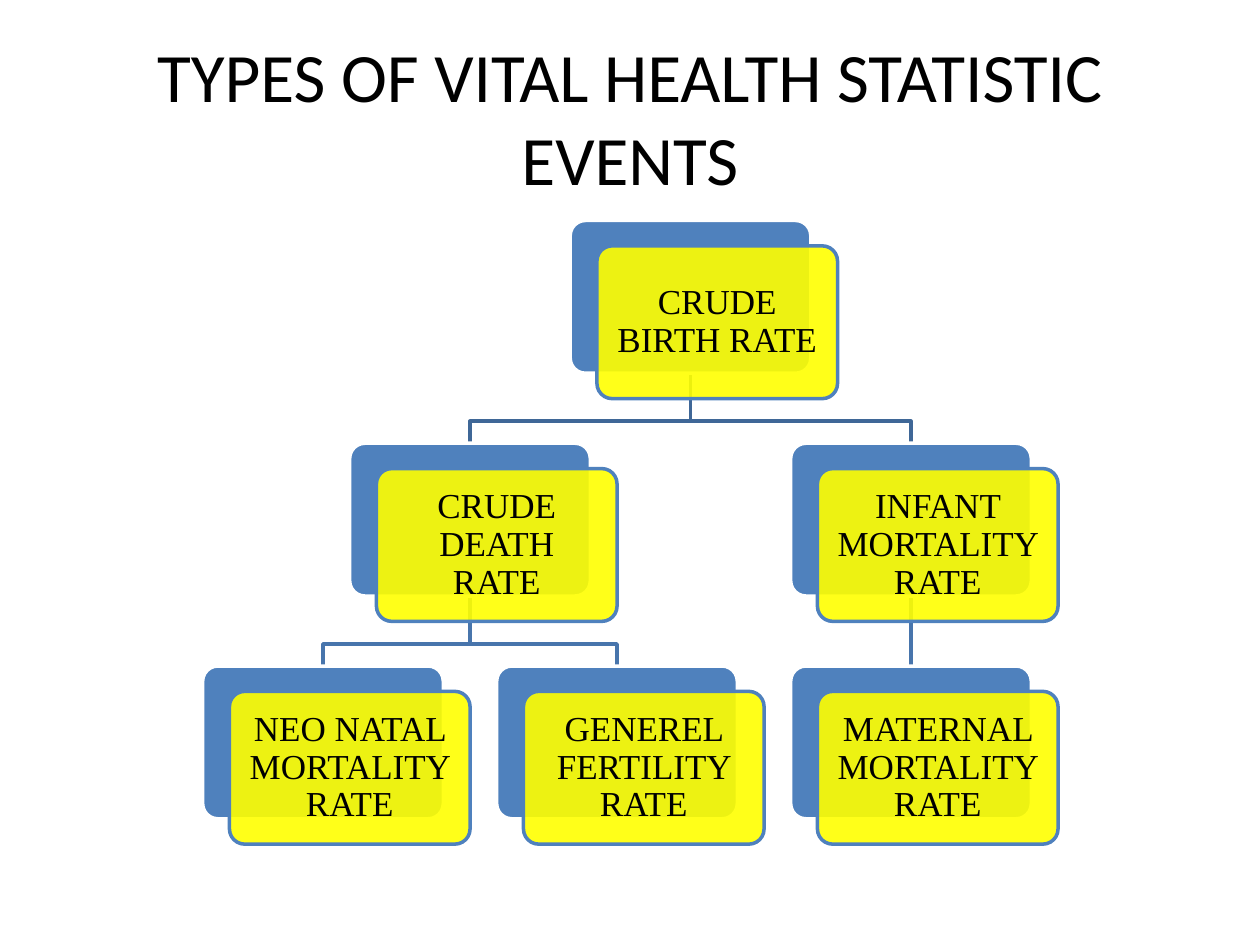
from dataclasses import dataclass

from lxml import etree
from pptx import Presentation
from pptx.dml.color import RGBColor
from pptx.enum.shapes import MSO_CONNECTOR, MSO_SHAPE
from pptx.enum.text import MSO_ANCHOR, PP_ALIGN
from pptx.oxml.ns import qn
from pptx.util import Pt

STRAIGHT = MSO_CONNECTOR.STRAIGHT
ROUNDED = MSO_SHAPE.ROUNDED_RECTANGLE
MIDDLE = MSO_ANCHOR.MIDDLE
CENTER = PP_ALIGN.CENTER

COLORS = {
    "black": "000000",
    "white": "FFFFFF",
    "blue": "4F81BD",
    "yellow": "FFFF00",
    "upper_link": "3F6797",
    "lower_link": "4875AC",
}
LEFT, TOP = 115.8, 126
COL_STEP, ROW_STEP = 168, 127.3
CARD_W, CARD_H = 137.5, 87.3
SHIFT_X, SHIFT_Y = 15.3, 14.5
ELBOW_DROP = 27.4


@dataclass
class Node:
    text: str
    col: float
    row: int

    @property
    def x(self) -> float:
        return LEFT + self.col * COL_STEP

    @property
    def y(self) -> float:
        return TOP + self.row * ROW_STEP

    @property
    def mid(self) -> float:
        return self.x + CARD_W / 2

    @property
    def bottom(self) -> float:
        return self.y + CARD_H


def rgb(name: str) -> RGBColor:
    return RGBColor.from_string(COLORS[name])


def write_text(sp, text: str, *, font: str, size: float, margins=(7.2, 3.6),
               spacing: float = 1.0, color: str = "black") -> None:
    tf = sp.text_frame
    tf.word_wrap = True
    tf.vertical_anchor = MIDDLE
    tf.margin_left = tf.margin_right = Pt(margins[0])
    tf.margin_top = tf.margin_bottom = Pt(margins[1])
    p = tf.paragraphs[0]
    p.alignment = CENTER
    p.line_spacing = spacing
    r = p.add_run()
    r.text = text
    r.font.name = font
    r.font.size = Pt(size)
    r.font.color.rgb = rgb(color)


def set_line(sp, color: str) -> None:
    sp.line.color.rgb = rgb(color)
    sp.line.width = Pt(2)


def add_card(s, x: float, y: float, fill: str, line: str, opacity: int = 100):
    sp = s.shapes.add_shape(ROUNDED, Pt(x), Pt(y), Pt(CARD_W), Pt(CARD_H))
    sp.adjustments[0] = 0.1
    sp.shadow.inherit = False
    sp.fill.solid()
    sp.fill.fore_color.rgb = rgb(fill)
    if opacity < 100:
        clr = sp._element.spPr.find(qn("a:solidFill")).find(qn("a:srgbClr"))
        etree.SubElement(clr, qn("a:alpha"), val=str(opacity * 1000))
    set_line(sp, line)
    return sp


def add_node(s, node: Node) -> None:
    add_card(s, node.x, node.y, "blue", "white")
    sp = add_card(s, node.x + SHIFT_X, node.y + SHIFT_Y, "yellow", "blue", 90)
    write_text(sp, node.text, font="Times New Roman", size=20,
               margins=(6, 6), spacing=0.9)


def add_link(s, parent: Node, child: Node) -> None:
    if parent.col == child.col:
        sp = s.shapes.add_connector(STRAIGHT, Pt(parent.mid), Pt(parent.bottom),
                                    Pt(child.mid), Pt(child.y))
        etree.SubElement(sp._element.spPr, qn("a:effectLst"))
    else:
        turn = parent.bottom + ELBOW_DROP
        path = s.shapes.build_freeform(Pt(parent.mid), Pt(parent.bottom))
        corners = [(parent.mid, turn), (child.mid, turn), (child.mid, child.y)]
        path.add_line_segments([(Pt(x), Pt(y)) for x, y in corners], close=False)
        sp = path.convert_to_shape()
        sp.fill.background()
        sp.shadow.inherit = False
    set_line(sp, "upper_link" if parent.row == 0 else "lower_link")


def main() -> None:
    prs = Presentation()
    prs.slide_width, prs.slide_height = Pt(720), Pt(540)
    s = prs.slides.add_slide(prs.slide_layouts[6])

    title = s.shapes.add_textbox(Pt(36), Pt(21.6), Pt(648), Pt(90))
    write_text(title, "TYPES OF VITAL HEALTH STATISTIC EVENTS",
               font="Calibri", size=39.6)

    birth = Node("CRUDE BIRTH RATE", 1.25, 0)
    death = Node("CRUDE DEATH RATE", 0.5, 1)
    neonatal = Node("NEO NATAL MORTALITY RATE", 0, 2)
    fertility = Node("GENEREL FERTILITY RATE", 1, 2)
    infant = Node("INFANT MORTALITY RATE", 2, 1)
    maternal = Node("MATERNAL MORTALITY RATE", 2, 2)

    links = [(infant, maternal), (birth, infant), (death, fertility),
             (death, neonatal), (birth, death)]
    for parent, child in links:
        add_link(s, parent, child)
    for node in (birth, death, neonatal, fertility, infant, maternal):
        add_node(s, node)

    prs.save("out.pptx")


if __name__ == "__main__":
    main()
